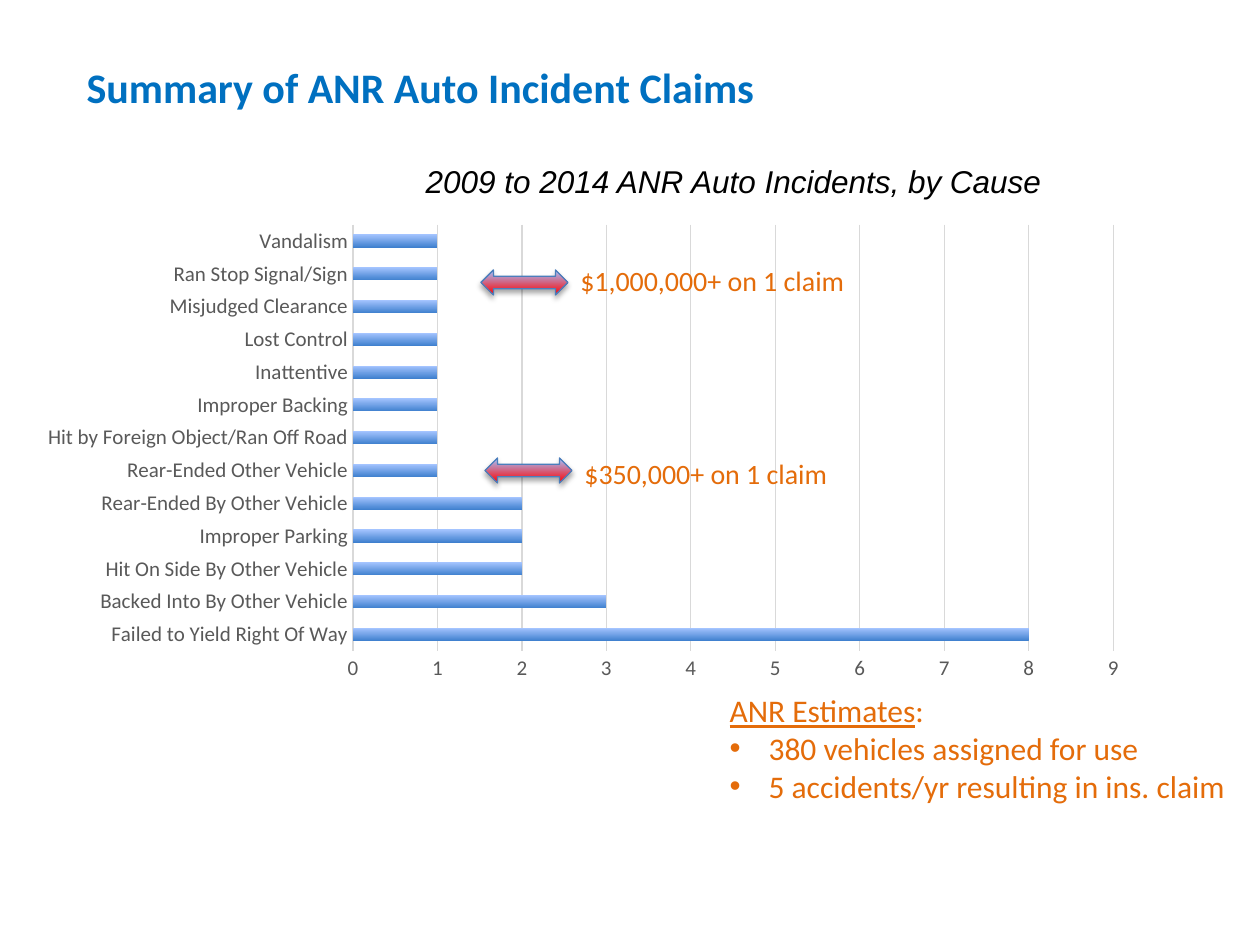
from dataclasses import dataclass

from lxml import etree
from pptx import Presentation
from pptx import util as u
from pptx.chart.data import CategoryChartData
from pptx.dml.color import RGBColor
from pptx.enum import chart as charts
from pptx.enum import shapes, text
from pptx.oxml import parse_xml
from pptx.oxml.ns import nsdecls, qn


@dataclass(frozen=True)
class Theme:
    """Colours, fonts and type sizes of the deck."""
    title: str = "0070C0"
    accent: str = "E46C0A"
    ink: str = "000000"
    label: str = "595959"
    grid: str = "D9D9D9"
    outline: str = "4B7EBC"
    bar: tuple = ("3F80CE", "A4C4FF")
    arrow: tuple = ("FF0000", "A4C4FF")
    font: str = "Calibri"
    caption_font: str = "Arial"
    title_size: int = 24
    body_size: int = 18
    note_size: int = 16
    axis_size: int = 12


THEME = Theme()
INCIDENTS = {
    "Failed to Yield Right Of Way": 8,
    "Backed Into By Other Vehicle": 3,
    "Hit On Side By Other Vehicle": 2,
    "Improper Parking": 2,
    "Rear-Ended By Other Vehicle": 2,
    "Rear-Ended Other Vehicle": 1,
    "Hit by Foreign Object/Ran Off Road": 1,
    "Improper Backing": 1,
    "Inattentive": 1,
    "Lost Control": 1,
    "Misjudged Clearance": 1,
    "Ran Stop Signal/Sign": 1,
    "Vandalism": 1,
}


def px(count):
    """Turn pixels into EMU."""
    return u.Emu(round(count * 914400 / 126))


def place(shape, box):
    """Move a shape to a box of left, top, width and height."""
    shape.left, shape.top, shape.width, shape.height = map(px, box)


def style(font, size, color, name=THEME.font, bold=False, italic=False):
    """Format one font."""
    font.size, font.name, font.bold, font.italic = u.Pt(size), name, bold, italic
    font.color.rgb = RGBColor.from_string(color)


def shade(fill, colors):
    """Fill with a gradient that rises from the first colour to the second."""
    fill.gradient()
    fill.gradient_angle = 90
    for stop, color in zip(fill.gradient_stops, colors):
        stop.color.rgb = RGBColor.from_string(color)


def add_title(page, box):
    """Fill the title placeholder."""
    title = page.shapes.title
    place(title, box)
    frame = title.text_frame
    frame.text = "Summary of ANR Auto Incident Claims"
    frame.auto_size = text.MSO_AUTO_SIZE.NONE
    frame.vertical_anchor = text.MSO_ANCHOR.BOTTOM
    para = frame.paragraphs[0]
    para.alignment = text.PP_ALIGN.LEFT
    style(para.runs[0].font, THEME.title_size, THEME.title, bold=True)


def add_label(page, box, wording, size, color, align=text.PP_ALIGN.LEFT, **look):
    """Add one line of text."""
    frame = page.shapes.add_textbox(*map(px, box)).text_frame
    frame.word_wrap = True
    frame.text = wording
    para = frame.paragraphs[0]
    para.alignment = align
    style(para.runs[0].font, size, color, **look)


def add_estimates(page, box):
    """Fill the body placeholder with a heading and a bulleted list."""
    body = page.placeholders[1]
    place(body, box)
    frame = body.text_frame
    frame.text = ("ANR Estimates\n380 vehicles assigned for use\n"
                  "5 accidents/yr resulting in ins. claim")
    frame.auto_size = text.MSO_AUTO_SIZE.NONE
    heading = frame.paragraphs[0]
    heading.add_run().text = ":"
    for para in frame.paragraphs:
        indent = 0 if para is heading or para._p is heading._p else px(39)
        para.space_before = u.Pt(0)
        properties = para._p.get_or_add_pPr()
        properties.set("marL", str(indent))
        properties.set("indent", str(-indent))
        if not indent:
            etree.SubElement(properties, qn("a:buNone"))
        for span in para.runs:
            style(span.font, THEME.body_size, THEME.accent)
    heading.runs[0].font.underline = True


def add_incident_chart(page, box):
    """Add the bar chart of incidents by cause."""
    data = CategoryChartData()
    data.categories = INCIDENTS.keys()
    data.add_series("Series 1", INCIDENTS.values())
    chart = page.shapes.add_chart(
        charts.XL_CHART_TYPE.BAR_STACKED, *map(px, box), data).chart
    chart.has_legend = chart.has_title = False
    style(chart.font, THEME.axis_size, THEME.label)
    plot = chart.plots[0]
    plot.gap_width, plot.overlap, plot.vary_by_categories = 150, 100, False
    shade(plot.series[0].format.fill, THEME.bar)
    for axis in (chart.category_axis, chart.value_axis):
        axis.major_tick_mark = axis.minor_tick_mark = charts.XL_TICK_MARK.NONE
        style(axis.tick_labels.font, THEME.axis_size, THEME.label)
    chart.category_axis.has_major_gridlines = False
    values = chart.value_axis
    values.minimum_scale, values.maximum_scale, values.major_unit = 0, 9, 1
    values.format.line.fill.background()
    for line, width in ((chart.category_axis.format.line, 1),
                        (values.major_gridlines.format.line, 0.75)):
        line.color.rgb = RGBColor.from_string(THEME.grid)
        line.width = u.Pt(width)
    set_plot_area(chart, x=0.28, y=0.03, w=0.7, h=0.87)


def set_plot_area(chart, **parts):
    """Fix the inner plot area as fractions of the chart."""
    area = chart._chartSpace.find(".//" + qn("c:plotArea"))
    for old in area.findall(qn("c:layout")):
        area.remove(old)
    modes = "".join(f'<c:{side}Mode val="edge"/>' for side in "xy")
    sizes = "".join(f'<c:{key} val="{value}"/>' for key, value in parts.items())
    area.insert(0, parse_xml(
        f'<c:layout {nsdecls("c")}><c:manualLayout><c:layoutTarget val="inner"/>'
        f'{modes}{sizes}</c:manualLayout></c:layout>'))


def add_claim_note(page, box, wording, drop):
    """Add a double arrow and, beside it, a claim amount lowered by drop."""
    left, top, width, height = box
    arrow = page.shapes.add_shape(
        shapes.MSO_SHAPE.LEFT_RIGHT_ARROW, px(left), px(top), px(87), px(height))
    shade(arrow.fill, THEME.arrow)
    arrow.line.color.rgb = RGBColor.from_string(THEME.outline)
    arrow.line.width = u.Pt(0.75)
    arrow.shadow.inherit = False
    arrow._element.spPr.find(qn("a:effectLst")).append(parse_xml(
        f'<a:outerShdw {nsdecls("a")} blurRad="{u.Pt(3.1)}" dist="{u.Pt(1.8)}" '
        f'dir="5400000" rotWithShape="0"><a:srgbClr val="{THEME.ink}">'
        '<a:alpha val="35000"/></a:srgbClr></a:outerShdw>'))
    add_label(page, (left + 87, top + drop, width - 87, 47), wording,
              THEME.note_size, THEME.accent)


def build_claims_page(deck):
    """Build the claims summary slide."""
    page = deck.slides.add_slide(deck.slide_layouts[1])
    add_title(page, (74, 63, 1061, 55))
    add_label(page, (392, 156, 683, 48), "2009 to 2014 ANR Auto Incidents, by Cause",
              THEME.body_size, THEME.ink, text.PP_ALIGN.CENTER,
              name=THEME.caption_font, italic=True)
    add_incident_chart(page, (48, 210, 1087, 490))
    add_estimates(page, (717, 685, 527, 127))
    add_claim_note(page, (481, 270, 413, 25), "$1,000,000+ on 1 claim", -13)
    add_claim_note(page, (485, 458, 394, 25), "$350,000+ on 1 claim", -8)


def main():
    """Create and save the deck."""
    deck = Presentation()
    deck.slide_width, deck.slide_height = px(1260), px(945)
    build_claims_page(deck)
    deck.save("out.pptx")


if __name__ == "__main__":
    main()
